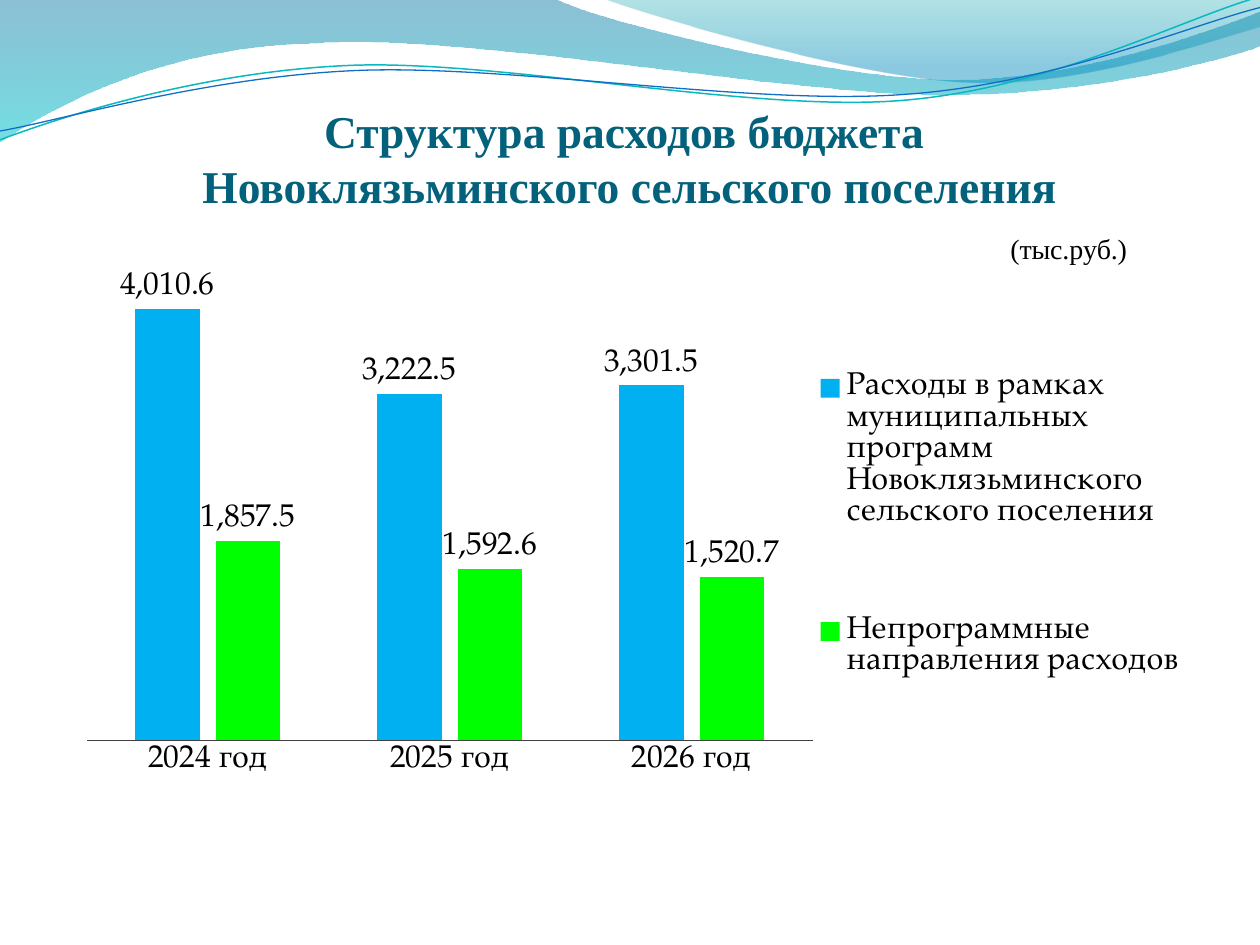
from lxml import etree
from pptx import Presentation
from pptx.chart.data import CategoryChartData
from pptx.dml.color import RGBColor
from pptx.enum.chart import XL_CHART_TYPE, XL_LABEL_POSITION, XL_LEGEND_POSITION, XL_TICK_MARK
from pptx.enum.text import MSO_ANCHOR, MSO_AUTO_SIZE, PP_ALIGN
from pptx.oxml import parse_xml
from pptx.oxml.ns import nsdecls, qn
from pptx.util import Inches, Pt

COLORS = {
    "title": "04617B", "text": "000000", "axis": "404040",
    "program": "00B0F0", "other": "00FF00",
    "band_top": "0074A1", "band_bottom": "00C6CF",
    "corner_top": "00A1A9", "corner_bottom": "008BBF",
    "teal_wave": "0AB8BF", "blue_wave": "0F6FC6",
}
HEADING_FONT, CHART_FONT = "Times New Roman", "TeX Gyre Pagella"
NUMBER_FORMAT = "#,##0.0"
CATEGORIES = ["2024 год", "2025 год", "2026 год"]
SERIES = [
    ("Расходы в рамках муниципальных программ Новоклязьминского сельского поселения",
     [4010.6, 3222.5, 3301.5], "program"),
    ("Непрограммные направления расходов", [1857.5, 1592.6, 1520.7], "other"),
]
BAND = [
    [(0, 0)], [(4.4, -0.01)],
    [(4.76, 0.17), (6.64, 0.63), (7.58, 0.63)], [(8.53, 0.63), (9.58, 0.26), (10, 0.09)],
    [(10.01, 0.36)], [(9.83, 0.44), (8.7, 0.76), (7.46, 0.75)],
    [(6.22, 0.75), (3.82, 0.28), (2.57, 0.34)], [(1.29, 0.36), (0.46, 0.83), (-0.01, 1.13)],
]
CORNER = [
    [(4.79, -0.01)], [(5.09, 0.11), (6.82, 0.62), (7.69, 0.65)],
    [(8.56, 0.69), (9.61, 0.32), (10, 0.21)], [(10, 0)],
]
TEAL_WAVE = [
    [(0, 1.11)], [(0.48, 0.93), (1.58, 0.57), (2.77, 0.52)],
    [(3.95, 0.47), (5.93, 0.89), (7.13, 0.8)], [(8.33, 0.71), (9.38, 0.15), (9.98, -0.02)],
]
BLUE_WAVE = [
    [(0, 1.04)], [(0.47, 0.96), (1.64, 0.61), (2.83, 0.56)],
    [(4.03, 0.51), (5.97, 0.84), (7.17, 0.75)], [(8.36, 0.67), (9.41, 0.21), (10, 0.06)],
]


def rgb(name):
    """Return the palette colour of the given name."""
    return RGBColor.from_string(COLORS[name])


def apply(target, **values):
    """Set each given attribute on the target."""
    for name, value in values.items():
        setattr(target, name, value)


def style_font(font, color, **values):
    """Format a font and give it a palette colour."""
    apply(font, **values)
    font.color.rgb = rgb(color)


def add_outline(slide, outline, closed):
    """Add a freeform whose three-point steps are cubic curves."""
    anchors = [(Inches(step[-1][0]), Inches(step[-1][1])) for step in outline]
    builder = slide.shapes.build_freeform(*anchors[0], scale=1.0)
    builder.add_line_segments(anchors[1:], close=closed)
    shape = builder.convert_to_shape()
    shape.shadow.inherit = False
    segments = list(shape.element.iter(qn("a:lnTo")))
    for segment, step in zip(segments, outline[1:]):
        if len(step) == 3:
            curve = etree.Element(qn("a:cubicBezTo"))
            for x, y in step:
                point = etree.SubElement(curve, qn("a:pt"))
                point.set("x", str(Inches(x) - shape.left))
                point.set("y", str(Inches(y) - shape.top))
            segment.getparent().replace(segment, curve)
    return shape


def add_gradient_area(slide, outline, stops):
    """Add a borderless area with a translucent downward gradient."""
    shape = add_outline(slide, outline, True)
    shape.line.fill.background()
    shape.fill.background()
    stop_xml = "".join(
        f'<a:gs pos="{position * 1000}"><a:srgbClr val="{COLORS[color]}">'
        f'<a:alpha val="{alpha * 1000}"/></a:srgbClr></a:gs>' for position, color, alpha in stops)
    gradient = parse_xml(f'<a:gradFill {nsdecls("a")}><a:gsLst>{stop_xml}</a:gsLst>'
                         '<a:lin ang="5400000" scaled="0"/></a:gradFill>')
    properties = shape.element.spPr
    properties.replace(properties.find(qn("a:noFill")), gradient)


def add_wave(slide, outline, color, width):
    """Add a thin wavy line."""
    shape = add_outline(slide, outline, False)
    shape.fill.background()
    shape.line.color.rgb = rgb(color)
    shape.line.width = Pt(width)


def add_header(slide):
    """Draw the coloured bands and waves along the top edge."""
    add_gradient_area(slide, BAND, [(0, "band_top", 45), (100, "band_bottom", 55)])
    add_gradient_area(slide, CORNER, [(0, "corner_top", 30), (80, "corner_bottom", 45)])
    add_wave(slide, TEAL_WAVE, "teal_wave", 0.85)
    add_wave(slide, BLUE_WAVE, "blue_wave", 0.75)


def add_title(slide, left, top, width, height):
    """Place the two-line heading in the title placeholder."""
    title = slide.shapes.title
    apply(title, left=left, top=top, width=width, height=height)
    apply(title.text_frame, margin_left=0, margin_right=0, margin_top=Inches(0.05), margin_bottom=0,
          vertical_anchor=MSO_ANCHOR.TOP, auto_size=MSO_AUTO_SIZE.NONE, word_wrap=True)
    paragraph = title.text_frame.paragraphs[0]
    apply(paragraph, alignment=PP_ALIGN.CENTER, line_spacing=1.0)
    for index, line in enumerate(["Структура расходов бюджета ", "Новоклязьминского сельского поселения"]):
        if index:
            paragraph.add_line_break()
        run = paragraph.add_run()
        run.text = line
        style_font(run.font, "title", name=HEADING_FONT, size=Pt(26), bold=True)
    slide.shapes.element.append(title.element)


def set_layout(chart, part, after=None, target=None, **fractions):
    """Give a chart part a manual layout placed after the named child."""
    element = next(chart.element.iter(qn(part)))
    for old in element.findall(qn("c:layout")):
        element.remove(old)
    layout = etree.Element(qn("c:layout"))
    manual = etree.SubElement(layout, qn("c:manualLayout"))
    settings = {"layoutTarget": target, "xMode": "edge", "yMode": "edge", **fractions}
    for name, value in settings.items():
        if value is not None:
            etree.SubElement(manual, qn(f"c:{name}")).set("val", str(value))
    position = element.index(element.find(qn(after))) + 1 if after else 0
    element.insert(position, layout)


def format_series(series, color):
    """Colour a series and show its values above the columns."""
    series.format.fill.solid()
    series.format.fill.fore_color.rgb = rgb(color)
    series.invert_if_negative = False
    labels = series.data_labels
    apply(labels, show_value=True, number_format=NUMBER_FORMAT, number_format_is_linked=False,
          position=XL_LABEL_POSITION.OUTSIDE_END)
    style_font(labels.font, "text", name=CHART_FONT, size=Pt(18))


def add_expense_chart(slide, left, top, width, height):
    """Add the clustered column chart with its unit caption and legend."""
    data = CategoryChartData(number_format=NUMBER_FORMAT)
    data.categories = CATEGORIES
    for name, values, _ in SERIES:
        data.add_series(name, values)
    chart = slide.shapes.add_chart(XL_CHART_TYPE.COLUMN_CLUSTERED, left, top, width, height, data).chart
    style_font(chart.font, "text", name=CHART_FONT, size=Pt(18))

    chart.has_title = True
    chart.chart_title.include_in_layout = False
    run = chart.chart_title.text_frame.paragraphs[0].add_run()
    run.text = "(тыс.руб.)"
    style_font(run.font, "text", name=HEADING_FONT, size=Pt(16), bold=False)
    set_layout(chart, "c:title", after="c:tx", x=0.83, y=0.02)

    plot = chart.plots[0]
    apply(plot, gap_width=150, overlap=-25, vary_by_categories=False)
    for series, (_, _, color) in zip(plot.series, SERIES):
        format_series(series, color)
    set_layout(chart, "c:plotArea", target="inner", x=0.02, y=0.07, w=0.64, h=0.8)

    apply(chart.value_axis, visible=False, has_major_gridlines=False, minimum_scale=0, maximum_scale=4500)
    apply(chart.category_axis, major_tick_mark=XL_TICK_MARK.NONE, minor_tick_mark=XL_TICK_MARK.NONE)
    chart.category_axis.format.line.color.rgb = rgb("axis")

    chart.has_legend = True
    apply(chart.legend, position=XL_LEGEND_POSITION.RIGHT, include_in_layout=False)
    style_font(chart.legend.font, "text", name=CHART_FONT, size=Pt(18))
    set_layout(chart, "c:legend", after="c:legendPos", x=0.66, y=0.12, w=0.33, h=0.79)


def main():
    """Build and save the presentation."""
    presentation = Presentation()
    apply(presentation, slide_width=Inches(10), slide_height=Inches(7.5))
    slide = presentation.slides.add_slide(presentation.slide_layouts[5])
    add_header(slide)
    add_title(slide, Inches(0.5), Inches(0.77), Inches(9), Inches(1.25))
    add_expense_chart(slide, Inches(0.51), Inches(1.7), Inches(9), Inches(4.8))
    presentation.save("out.pptx")


if __name__ == "__main__":
    main()
